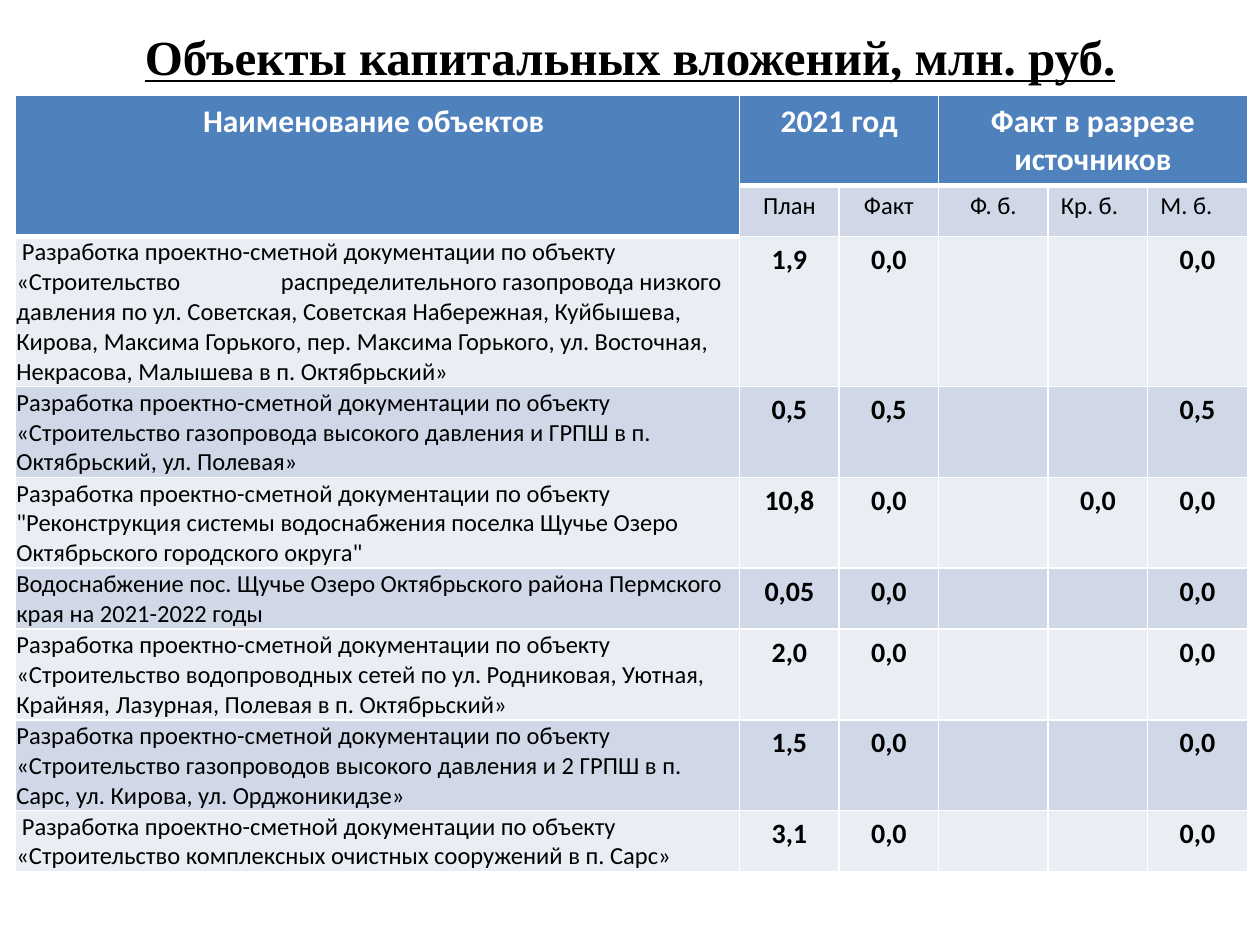
import pptx
import pptx.util
from lxml import etree
from pptx.dml.color import RGBColor
from pptx.enum.text import MSO_ANCHOR, PP_ALIGN
from pptx.oxml.ns import qn
from pptx.util import Inches, Pt

BLACK = RGBColor(0x00, 0x00, 0x00)
WHITE = RGBColor(0xFF, 0xFF, 0xFF)
HEADER_BLUE = RGBColor(0x4F, 0x81, 0xBD)
BAND_DARK = RGBColor(0xD0, 0xD8, 0xE8)
BAND_LIGHT = RGBColor(0xE9, 0xED, 0xF4)

TITLE = "Объекты капитальных вложений, млн. руб."
# Heading, first column, columns spanned, rows spanned
HEADINGS = [
    ("Наименование объектов ", 0, 1, 2),
    ("2021 год", 1, 2, 1),
    ("Факт в разрезе источников", 3, 3, 1),
]
SUBHEADINGS = ["План", "Факт", "Ф. б.", "Кр. б.", "М. б."]
# Object, then plan, fact and the three sources
OBJECTS = [
    (" Разработка проектно-сметной документации по объекту «Строительство\t"
     "распределительного газопровода низкого давления по ул. Советская, "
     "Советская Набережная, Куйбышева, Кирова, Максима Горького, пер. Максима "
     "Горького, ул. Восточная, Некрасова, Малышева в п. Октябрьский»",
     "1,9", "0,0", "", "", "0,0"),
    ("Разработка проектно-сметной документации по объекту «Строительство "
     "газопровода высокого давления и ГРПШ в п. Октябрьский, ул. Полевая»",
     "0,5", "0,5", "", "", "0,5"),
    ("Разработка проектно-сметной документации по объекту \"Реконструкция системы "
     "водоснабжения поселка Щучье Озеро Октябрьского городского округа\"",
     "10,8", "0,0", "", "0,0", "0,0"),
    ("Водоснабжение пос. Щучье Озеро Октябрьского района Пермского края "
     "на 2021-2022 годы",
     "0,05", "0,0", "", "", "0,0"),
    ("Разработка проектно-сметной документации по объекту «Строительство "
     "водопроводных сетей по ул. Родниковая, Уютная, Крайняя, Лазурная, Полевая "
     "в п. Октябрьский»",
     "2,0", "0,0", "", "", "0,0"),
    ("Разработка проектно-сметной документации по объекту «Строительство "
     "газопроводов высокого давления и 2 ГРПШ в п. Сарс, ул. Кирова, "
     "ул. Орджоникидзе»",
     "1,5", "0,0", "", "", "0,0"),
    (" Разработка проектно-сметной документации по объекту «Строительство "
     "комплексных очистных сооружений в п. Сарс»",
     "3,1", "0,0", "", "", "0,0"),
]
COLUMN_WIDTHS = [5.75, 0.79, 0.79, 0.87, 0.79, 0.79]
ROW_HEIGHTS = [0.71, 0.4, 1.19, 0.72, 0.72, 0.48, 0.72, 0.72, 0.48]
GAP_STOP = 2.1


def style_cell(cell, fill, bottom=1):
    """Give the cell white borders and a solid fill; widths are in points."""
    properties = cell._tc.get_or_add_tcPr()
    for side, width in (("L", 1), ("R", 1), ("T", 1), ("B", bottom)):
        line = etree.SubElement(properties, qn(f"a:ln{side}"), w=str(Pt(width)))
        solid = etree.SubElement(line, qn("a:solidFill"))
        etree.SubElement(solid, qn("a:srgbClr"), val=str(WHITE))
    cell.fill.solid()
    cell.fill.fore_color.rgb = fill


def write(text_frame, text, size, color=BLACK, bold=False,
          align=PP_ALIGN.CENTER, face="Calibri"):
    paragraph = text_frame.paragraphs[0]
    paragraph.text = text
    paragraph.alignment = align
    if "\t" in text:
        stops = etree.SubElement(paragraph._p.get_or_add_pPr(), qn("a:tabLst"))
        etree.SubElement(stops, qn("a:tab"), pos=str(Inches(GAP_STOP)), algn="l")
    font = paragraph.font
    font.name, font.size, font.bold = face, Pt(size), bold
    font.color.rgb = color
    return font


def add_title(slide):
    title = slide.shapes.title
    title.left, title.top = Inches(0.5), Inches(0.06)
    title.width, title.height = Inches(9), Inches(0.77)
    title.text_frame.vertical_anchor = MSO_ANCHOR.MIDDLE
    font = write(title.text_frame, TITLE, 28, bold=True, face="Times New Roman")
    font.underline = True


def add_objects_table(slide):
    table = slide.shapes.add_table(
        len(ROW_HEIGHTS), len(COLUMN_WIDTHS), Inches(0.12), Inches(0.76),
        Inches(sum(COLUMN_WIDTHS)), Inches(sum(ROW_HEIGHTS))).table
    table.first_row = table.horz_banding = False
    for column, width in zip(table.columns, COLUMN_WIDTHS):
        column.width = Inches(width)
    for row, height in zip(table.rows, ROW_HEIGHTS):
        row.height = Inches(height)

    for cell in table.rows[0].cells:
        style_cell(cell, HEADER_BLUE, bottom=3)
    style_cell(table.cell(1, 0), HEADER_BLUE, bottom=3)
    for heading, first, columns, rows in HEADINGS:
        cell = table.cell(0, first)
        cell.merge(table.cell(rows - 1, first + columns - 1))
        write(cell.text_frame, heading, 18, WHITE, bold=True)

    for column, subheading in enumerate(SUBHEADINGS, start=1):
        cell = table.cell(1, column)
        style_cell(cell, BAND_DARK)
        align = PP_ALIGN.CENTER if column < 4 else PP_ALIGN.LEFT
        write(cell.text_frame, subheading, 14, align=align)

    for row, (name, *amounts) in enumerate(OBJECTS, start=2):
        band = BAND_DARK if row % 2 else BAND_LIGHT
        name_cell = table.cell(row, 0)
        style_cell(name_cell, band)
        name_cell.vertical_anchor = MSO_ANCHOR.MIDDLE
        name_cell.margin_left = name_cell.margin_right = Inches(0.01)
        name_cell.margin_top, name_cell.margin_bottom = Inches(0.01), 0
        write(name_cell.text_frame, name, 14, align=PP_ALIGN.LEFT)
        for column, amount in enumerate(amounts, start=1):
            cell = table.cell(row, column)
            style_cell(cell, band)
            if amount:
                write(cell.text_frame, amount, 16, bold=True)


def main():
    presentation = pptx.Presentation()
    presentation.slide_width, presentation.slide_height = Inches(10), Inches(7.5)
    slide = presentation.slides.add_slide(presentation.slide_layouts[5])
    add_title(slide)
    add_objects_table(slide)
    presentation.save("out.pptx")


if __name__ == "__main__":
    main()
